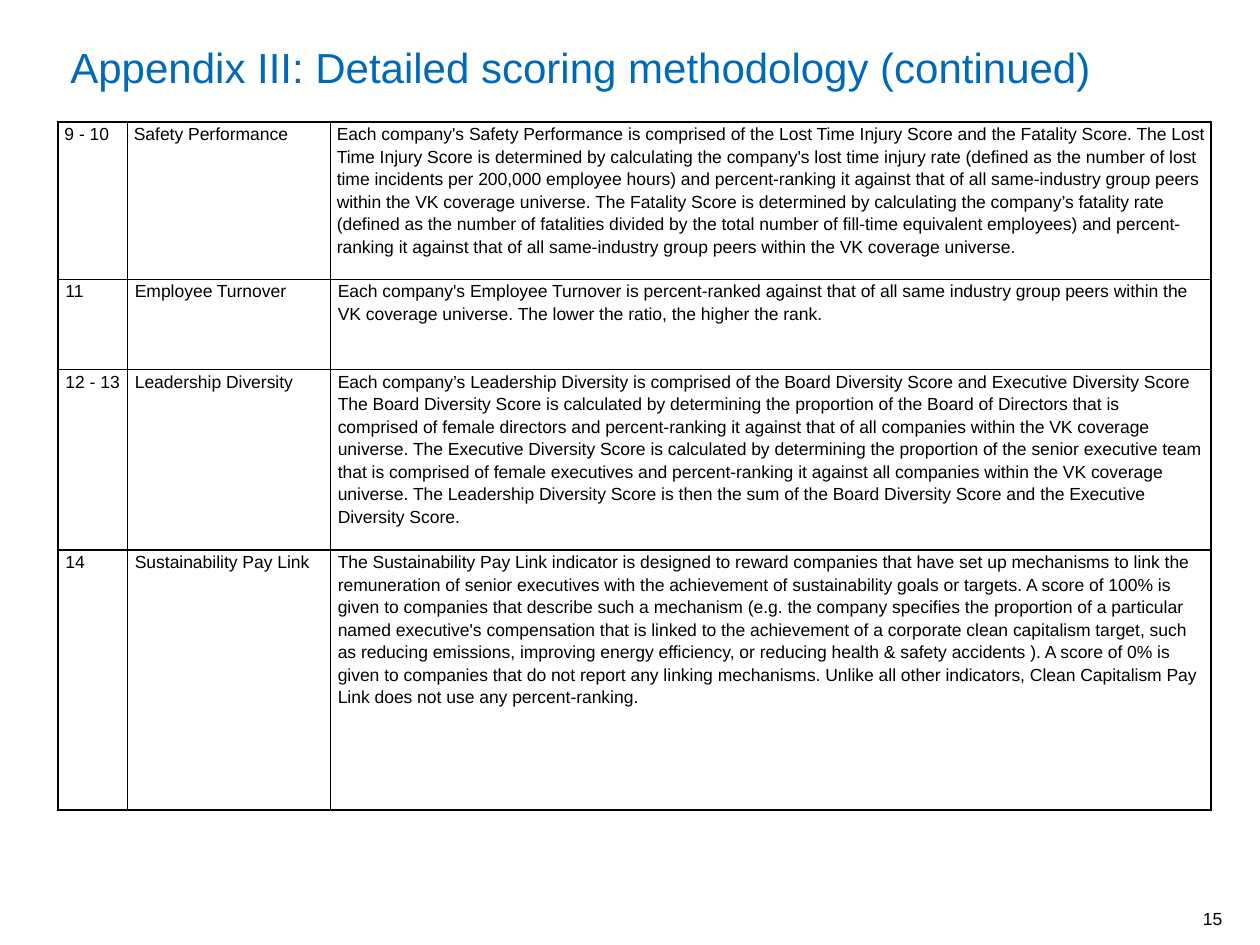
"""Build the scoring methodology appendix slide."""
from pptx import Presentation
from pptx.dml.color import RGBColor
from pptx.enum.text import MSO_ANCHOR, PP_ALIGN
from pptx.oxml.ns import qn
from pptx.util import Cm, Pt
from lxml import etree

TOP, BOTTOM = MSO_ANCHOR.TOP, MSO_ANCHOR.BOTTOM
LEFT, RIGHT = PP_ALIGN.LEFT, PP_ALIGN.RIGHT
BLACK, BLUE = "000000", "006AB6"

TITLE = "Appendix III: Detailed scoring methodology (continued)"
PAGE = "15"
COLS = [1.4, 4.09, 17.75]
ROWS = [
    (3.17, 0.13, "9 - 10", "Safety Performance",
     "Each company's Safety Performance is comprised of the Lost Time Injury Score and the Fatality Score. "
     "The Lost Time Injury Score is determined by calculating the company's lost time injury rate (defined as "
     "the number of lost time incidents per 200,000 employee hours) and percent‐ranking it against that of all "
     "same‐industry group peers within the VK coverage universe. The Fatality Score is determined by "
     "calculating the company’s fatality rate (defined as the number of fatalities divided by the total number "
     "of fill-time equivalent employees) and percent‐ranking it against that of all same‐industry group peers "
     "within the VK coverage universe."),
    (1.82, 0.15, "11", "Employee Turnover",
     "Each company's Employee Turnover is percent‐ranked against that of all same industry group peers within "
     "the VK coverage universe. The lower the ratio, the higher the rank."),
    (3.64, 0.15, "12 - 13", "Leadership Diversity",
     "Each company’s Leadership Diversity is comprised of the Board Diversity Score and Executive Diversity "
     "Score The Board Diversity Score is calculated by determining the proportion of the Board of Directors "
     "that is comprised of female directors and percent‐ranking it against that of all companies within the VK "
     "coverage universe. The Executive Diversity Score is calculated by determining the proportion of the "
     "senior executive team that is comprised of female executives and percent‐ranking it against all companies "
     "within the VK coverage universe. The Leadership Diversity Score is then the sum of the Board Diversity "
     "Score and the Executive Diversity Score."),
    (5.24, 0.15, "14", "Sustainability Pay Link",
     "The Sustainability Pay Link indicator is designed to reward companies that have set up mechanisms to link "
     "the remuneration of senior executives with the achievement of sustainability goals or targets. A score of "
     "100% is given to companies that describe such a mechanism (e.g. the company specifies the proportion of a "
     "particular named executive's compensation that is linked to the achievement of a corporate clean "
     "capitalism target, such as reducing emissions, improving energy efficiency, or reducing health & safety "
     "accidents ). A score of 0% is given to companies that do not report any linking mechanisms. Unlike all "
     "other indicators, Clean Capitalism Pay Link does not use any percent‐ranking."),
]


def style(par, size, color):
    par.font.name = "Arial"
    par.font.size = Pt(size)
    par.font.color.rgb = RGBColor.from_string(color)


def add_text(slide, text, area, size, color, align, anchor, pad):
    frame = slide.shapes.add_textbox(*map(Cm, area)).text_frame
    frame.word_wrap = True
    frame.vertical_anchor = anchor
    frame.margin_left = frame.margin_right = Cm(pad)
    frame.margin_top = frame.margin_bottom = Cm(pad / 2)
    par = frame.paragraphs[0]
    par.text = text
    par.alignment = align
    style(par, size, color)


def add_edges(cell):
    props = cell._tc.get_or_add_tcPr()
    for side in ("a:lnL", "a:lnR", "a:lnT", "a:lnB"):
        line = etree.SubElement(props, qn(side), w=str(Pt(1)))
        fill = etree.SubElement(line, qn("a:solidFill"))
        etree.SubElement(fill, qn("a:srgbClr"), val=BLACK)


def fill_cell(cell, text, pad):
    cell.margin_left = cell.margin_right = Cm(pad)
    cell.margin_top = cell.margin_bottom = 0
    cell.vertical_anchor = TOP
    par = cell.text_frame.paragraphs[0]
    par.text = text
    par.line_spacing = 1.15
    style(par, 10, BLACK)
    add_edges(cell)
    cell.fill.background()


def add_grid(slide):
    high = sum(row[0] for row in ROWS)
    area = (1.17, 2.46, sum(COLS), high)
    grid = slide.shapes.add_table(len(ROWS), len(COLS), *map(Cm, area)).table
    grid.first_row = grid.horz_banding = False
    for col, wide in zip(grid.columns, COLS):
        col.width = Cm(wide)
    for row, (tall, pad, *texts) in zip(grid.rows, ROWS):
        row.height = Cm(tall)
        for cell, text in zip(row.cells, texts):
            fill_cell(cell, text, pad)


def main():
    deck = Presentation()
    deck.slide_width, deck.slide_height = Cm(25.4), Cm(19.05)
    slide = deck.slides.add_slide(deck.slide_layouts[6])
    add_text(slide, PAGE, (22.68, 18.21, 1.96, 0.51), 10, BLACK, RIGHT, BOTTOM, 0)
    add_grid(slide)
    add_text(slide, TITLE, (1.17, 0.72, 21.84, 1.7), 24, BLUE, LEFT, TOP, 0.25)
    deck.save("out.pptx")


if __name__ == "__main__":
    main()
